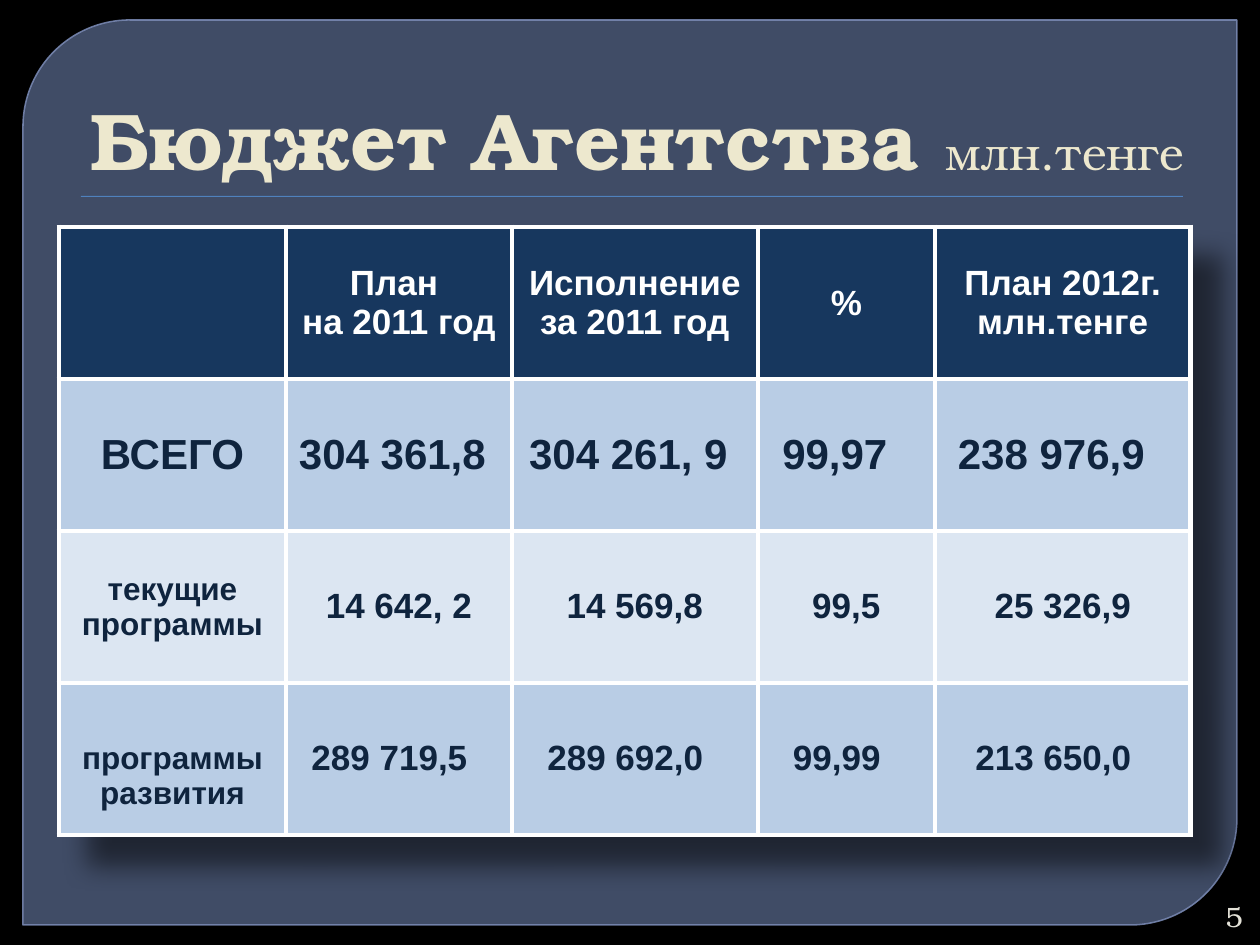
import dataclasses
import pptx
import pptx.dml.color
import pptx.enum.shapes
import pptx.enum.text
import pptx.oxml
import pptx.oxml.ns
import pptx.util

EMU_PER_PX = 914400 // 126
ALIGN = pptx.enum.text.PP_ALIGN
ANCHOR = pptx.enum.text.MSO_ANCHOR
SHAPE = pptx.enum.shapes.MSO_SHAPE
NS = pptx.oxml.ns.nsdecls("a")


@dataclasses.dataclass(frozen=True)
class Theme:
    backdrop: str = "000000"
    panel: str = "63759D"
    panel_edge: str = "7989B3"
    rule: str = "4F81BD"
    title: str = "EDE8CE"
    number: str = "E3E1D7"
    header_fill: str = "17375E"
    row_fills: tuple = ("B9CDE5", "DCE6F2")
    header_text: str = "FFFFFF"
    body_text: str = "0F243E"
    grid: str = "FFFFFF"
    serif: str = "TeX Gyre Bonum"
    sans: str = "Arial"
    title_size: int = 46
    unit_size: int = 27
    number_size: int = 16
    total_size: int = 24
    cell_size: int = 20
    label_size: int = 18


THEME = Theme()
COLUMNS = (227, 226, 246, 177, 256)
ROW_HEIGHT = 152
SIDE_MARGIN = 13
NUMBER_MARGIN = 4
HEADERS = ("", "План \nна 2011 год", "Исполнение за 2011 год", "%", "План 2012г. млн.тенге")


@dataclasses.dataclass(frozen=True)
class BudgetRow:
    label: str
    values: tuple
    label_size: int
    value_size: int
    right_gaps: tuple = (0, 0, 0, 0)
    label_drop: int = 0


BUDGET = (
    BudgetRow("ВСЕГО", ("304 361,8", "304 261, 9", "99,97", "238 976,9"),
              THEME.total_size, THEME.total_size, (13, 13, 23, 23)),
    BudgetRow("текущие программы", ("14 642, 2", "14 569,8", "99,5", "25 326,9"),
              THEME.label_size, THEME.cell_size),
    BudgetRow("программы развития", ("289 719,5", "289 692,0", "99,99", "213 650,0"),
              THEME.label_size, THEME.cell_size, (19, 19, 19, 19), 35),
)


def px(length):
    return pptx.util.Emu(length * EMU_PER_PX)


def rgb(value):
    return pptx.dml.color.RGBColor.from_string(value)


def add_span(para, text, size, color, font, bold=False):
    span = para.add_run()
    span.text = text
    span.font.size = pptx.util.Pt(size)
    span.font.name = font
    span.font.bold = bold
    span.font.color.rgb = rgb(color)


def set_opacity(fill_parent, percent):
    """Make the solid colour inside an XML element partly transparent."""
    color = fill_parent.find(pptx.oxml.ns.qn("a:solidFill"))[0]
    color.append(pptx.oxml.parse_xml(f'<a:alpha {NS} val="{percent * 1000}"/>'))


def add_plain_shape(page, kind, box, fill):
    shape = page.shapes.add_shape(kind, *map(px, box))
    shape.shadow.inherit = False
    shape.fill.solid()
    shape.fill.fore_color.rgb = rgb(fill)
    shape.line.fill.background()
    return shape


def add_text_line(page, box, anchor):
    """Add a right-aligned text box and return its paragraph."""
    frame = page.shapes.add_textbox(*map(px, box)).text_frame
    frame.word_wrap = True
    frame.vertical_anchor = anchor
    para = frame.paragraphs[0]
    para.alignment = ALIGN.RIGHT
    return para


def add_panel(page, box):
    panel = add_plain_shape(page, SHAPE.ROUND_2_DIAG_RECTANGLE, box, THEME.panel)
    panel.adjustments[0] = 0.118
    panel.adjustments[1] = 0
    panel.line.color.rgb = rgb(THEME.panel_edge)
    panel.line.width = pptx.util.Pt(0.87)
    properties = panel.fill._xPr
    set_opacity(properties, 65)
    set_opacity(properties.find(pptx.oxml.ns.qn("a:ln")), 88)


def add_title(page, box):
    left, top, width, height = box
    add_plain_shape(page, SHAPE.RECTANGLE, (left + 18, top + height + 3, width - 32, 1), THEME.rule)
    para = add_text_line(page, box, ANCHOR.BOTTOM)
    add_span(para, "Бюджет Агентства ", THEME.title_size, THEME.title, THEME.serif, True)
    add_span(para, "млн.тенге", THEME.unit_size, THEME.title, THEME.serif)


def add_page_number(page, box):
    para = add_text_line(page, box, ANCHOR.MIDDLE)
    add_span(para, "5", THEME.number_size, THEME.number, THEME.serif)


def set_borders(cell):
    properties = cell._tc.get_or_add_tcPr()
    for place, side in enumerate(("lnL", "lnR", "lnT", "lnB")):
        properties.insert(place, pptx.oxml.parse_xml(
            f'<a:{side} {NS} w="{pptx.util.Pt(3)}"><a:solidFill>'
            f'<a:srgbClr val="{THEME.grid}"/></a:solidFill></a:{side}>'))


def fill_cell(cell, text, size, color, fill, side=SIDE_MARGIN, right_gap=0, drop=0):
    cell.fill.solid()
    cell.fill.fore_color.rgb = rgb(fill)
    set_borders(cell)
    cell.vertical_anchor = ANCHOR.MIDDLE
    cell.margin_left = px(side)
    cell.margin_right = px(side + right_gap)
    cell.margin_top = px(6 + drop)
    frame = cell.text_frame
    for index, line in enumerate(text.split("\n")):
        para = frame.add_paragraph() if index else frame.paragraphs[0]
        para.alignment = ALIGN.CENTER
        if line:
            add_span(para, line, size, color, THEME.sans, True)


def add_table_shadow(table):
    table._tbl.tblPr.insert(0, pptx.oxml.parse_xml(
        f'<a:effectLst {NS}><a:outerShdw blurRad="{px(26)}" dist="{px(42)}" dir="2700000" '
        'algn="tl" rotWithShape="0"><a:srgbClr val="000000"><a:alpha val="50000"/>'
        '</a:srgbClr></a:outerShdw></a:effectLst>'))


def add_budget_table(page, left, top):
    row_count = len(BUDGET) + 1
    table = page.shapes.add_table(row_count, len(COLUMNS), px(left), px(top),
                                  px(sum(COLUMNS)), px(ROW_HEIGHT * row_count)).table
    add_table_shadow(table)
    for column, width in zip(table.columns, COLUMNS):
        column.width = px(width)
    for row in table.rows:
        row.height = px(ROW_HEIGHT)
    for index, header in enumerate(HEADERS):
        fill_cell(table.cell(0, index), header, THEME.cell_size,
                  THEME.header_text, THEME.header_fill)
    for number, row in enumerate(BUDGET, start=1):
        fill = THEME.row_fills[(number - 1) % 2]
        fill_cell(table.cell(number, 0), row.label, row.label_size,
                  THEME.body_text, fill, drop=row.label_drop)
        for index, (value, gap) in enumerate(zip(row.values, row.right_gaps), start=1):
            fill_cell(table.cell(number, index), value, row.value_size,
                      THEME.body_text, fill, NUMBER_MARGIN, gap)


def main():
    deck = pptx.Presentation()
    deck.slide_width, deck.slide_height = px(1260), px(945)
    page = deck.slides.add_slide(deck.slide_layouts[6])
    page.background.fill.solid()
    page.background.fill.fore_color.rgb = rgb(THEME.backdrop)
    add_panel(page, (23, 20, 1214, 905))
    add_title(page, (63, 35, 1134, 158))
    add_page_number(page, (1191, 897, 64, 38))
    add_budget_table(page, 59, 227)
    deck.save("out.pptx")


if __name__ == "__main__":
    main()
